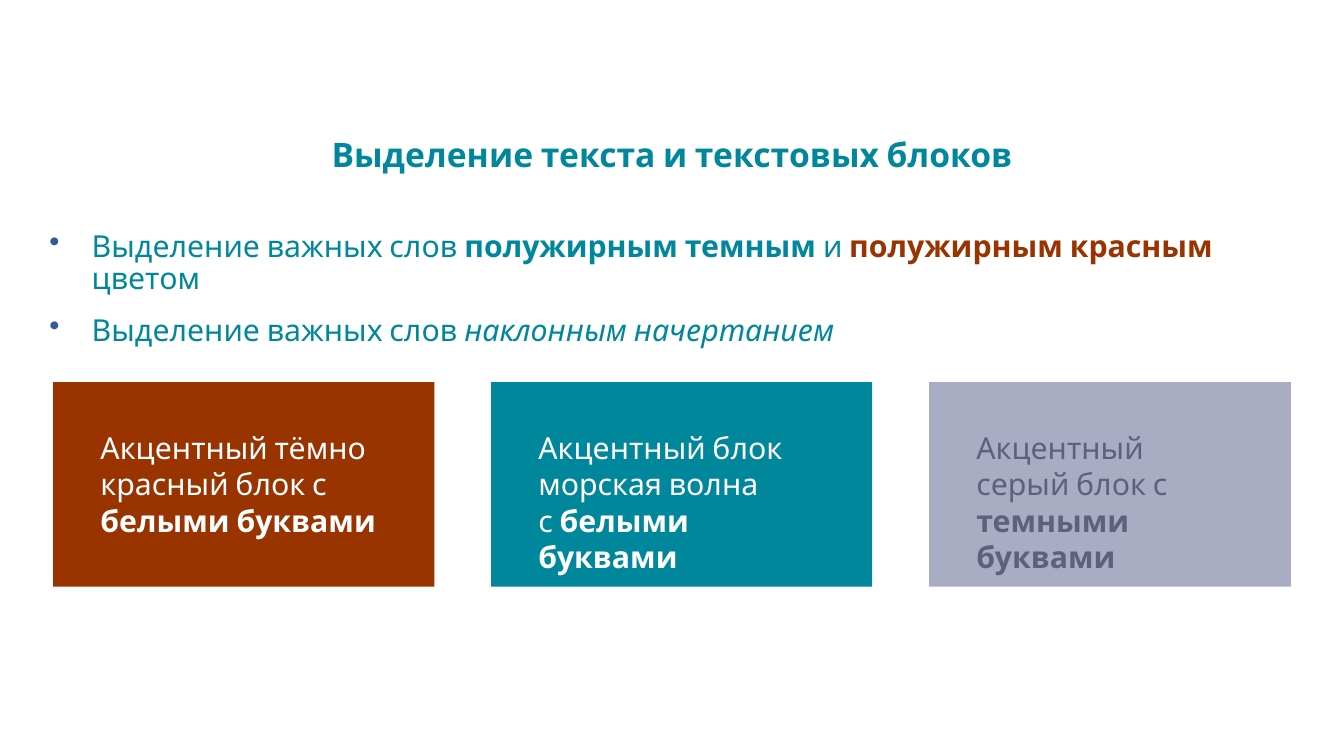
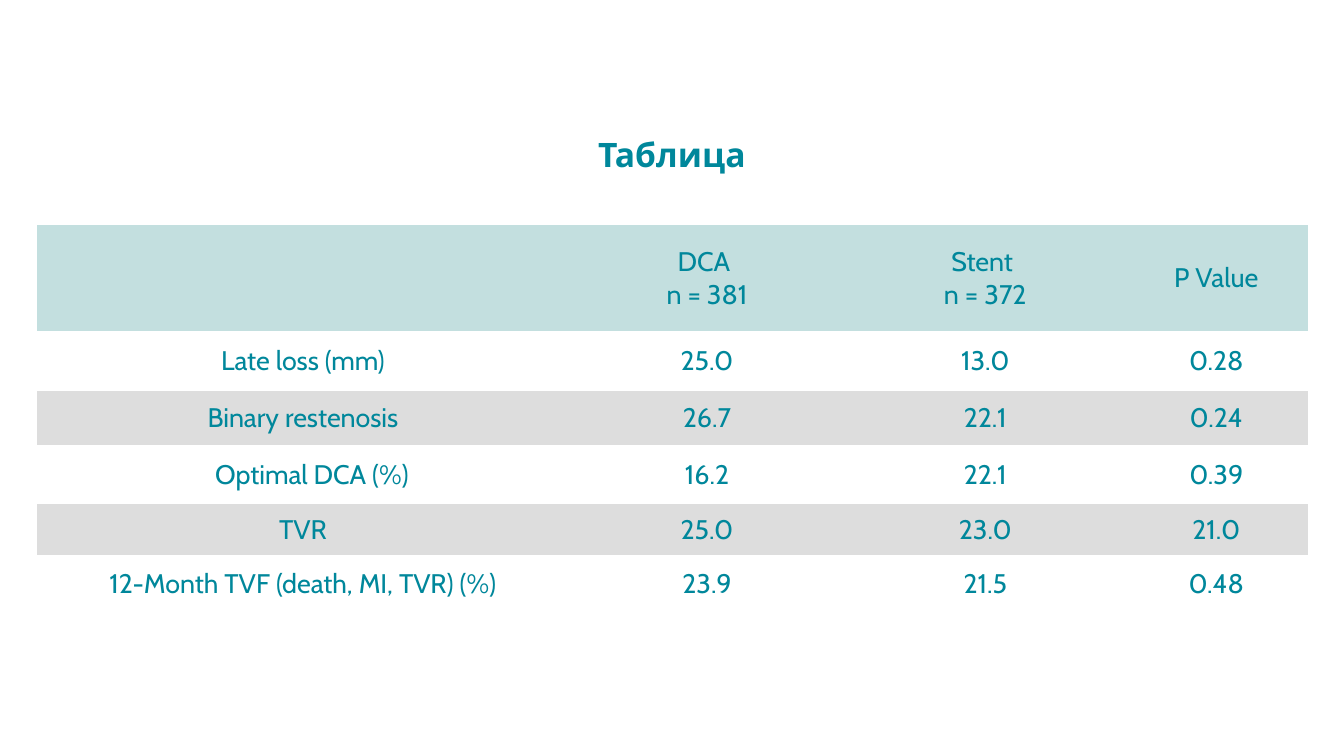
import pptx
import pptx.util
import pptx.dml.color
import pptx.enum.shapes
import pptx.enum.text
import pptx.oxml
import pptx.oxml.ns
from lxml import etree

Inches = pptx.util.Inches
Pt = pptx.util.Pt
RGBColor = pptx.dml.color.RGBColor
PP_ALIGN = pptx.enum.text.PP_ALIGN
MSO_ANCHOR = pptx.enum.text.MSO_ANCHOR
qn = pptx.oxml.ns.qn

TEAL = RGBColor(0x00, 0x87, 0x9B)
RED = RGBColor(0x99, 0x33, 0x00)
GREY = RGBColor(0xA8, 0xAD, 0xC4)
DARK_GREY = RGBColor(0x60, 0x60, 0x7D)
WHITE = RGBColor(0xFF, 0xFF, 0xFF)
HEADER = RGBColor(0xC3, 0xDF, 0xDF)
BAND = RGBColor(0xDD, 0xDD, 0xDD)
BULLET = RGBColor(0x31, 0x59, 0x9C)
FONT = "Cabin"
PLAIN_TABLE = "{2D5ABB26-0587-4C30-8999-92F81FD0307C}"


def apply(target, values):
    for name, value in values.items():
        setattr(target, name, value)


def margins(x, y):
    return {"margin_left": Inches(x), "margin_right": Inches(x),
            "margin_top": Inches(y), "margin_bottom": Inches(y)}


class Deck:
    def __init__(self):
        self.prs = pptx.Presentation()
        apply(self.prs, {"slide_width": Inches(11.11), "slide_height": Inches(6.25)})
        self.s = None

    def add_text(self, p, runs, size, color):
        for text, style in runs:
            for i, line in enumerate(text.split("\n")):
                if i:
                    p.add_line_break()
                r = p.add_run()
                r.text = line
                font = {"name": FONT, "size": Pt(size), "bold": False, **style}
                r.font.color.rgb = font.pop("color", color)
                apply(r.font, font)

    def slide(self, title):
        self.s = self.prs.slides.add_slide(self.prs.slide_layouts[5])
        sp = self.s.shapes.title
        apply(sp, {"left": 0, "top": Inches(1),
                   "width": self.prs.slide_width, "height": Inches(0.59)})
        tf = sp.text_frame
        apply(tf, {"word_wrap": True, "vertical_anchor": MSO_ANCHOR.MIDDLE,
                   "auto_size": pptx.enum.text.MSO_AUTO_SIZE.NONE, **margins(0.05, 0.05)})
        p = tf.paragraphs[0]
        apply(p, {"alignment": PP_ALIGN.CENTER, "line_spacing": 0.9})
        self.add_text(p, [(title, {"bold": True})], 20, TEAL)

    def bullets(self, box, items):
        tf = self.s.shapes.add_textbox(*map(Inches, box)).text_frame
        tf.word_wrap = True
        for i, runs in enumerate(items):
            p = tf.add_paragraph() if i else tf.paragraphs[0]
            ppr = p._p.get_or_add_pPr()
            ppr.set("marL", str(Inches(0.35)))
            ppr.set("indent", str(-Inches(0.35)))
            color = etree.SubElement(ppr, qn("a:buClr"))
            etree.SubElement(color, qn("a:srgbClr")).set("val", str(BULLET))
            etree.SubElement(ppr, qn("a:buChar")).set("char", "•")
            p.line_spacing = 0.9
            if i:
                p.space_before = Pt(11.1)
            self.add_text(p, runs, 18, TEAL)

    def block(self, box, fill, color, text, strong):
        sp = self.s.shapes.add_shape(pptx.enum.shapes.MSO_SHAPE.RECTANGLE, *map(Inches, box))
        sp.shadow.inherit = False
        sp.fill.solid()
        sp.fill.fore_color.rgb = fill
        sp.line.fill.background()
        tf = sp.text_frame
        apply(tf, {"word_wrap": True, "vertical_anchor": MSO_ANCHOR.TOP, **margins(0.39, 0.39)})
        p = tf.paragraphs[0]
        p.alignment = PP_ALIGN.LEFT
        self.add_text(p, [(text, {}), (strong, {"bold": True})], 18, color)

    def table(self, left, top, widths, heights, rows):
        box = map(Inches, (left, top, sum(widths), sum(heights)))
        table = self.s.shapes.add_table(len(heights), len(widths), *box).table
        table._tbl.tblPr.find(qn("a:tableStyleId")).text = PLAIN_TABLE
        apply(table, {"first_row": False, "horz_banding": False})
        for column, width in zip(table.columns, widths):
            column.width = Inches(width)
        for i, (row, height, texts) in enumerate(zip(table.rows, heights, rows)):
            row.height = Inches(height)
            fill = HEADER if i == 0 else BAND if i % 2 == 0 else None
            for cell, text in zip(row.cells, texts):
                apply(cell, {"vertical_anchor": MSO_ANCHOR.MIDDLE, **margins(0.11, 0.06)})
                if fill is None:
                    cell.fill.background()
                else:
                    cell.fill.solid()
                    cell.fill.fore_color.rgb = fill
                p = cell.text_frame.paragraphs[0]
                p.alignment = PP_ALIGN.CENTER
                if text:
                    self.add_text(p, [(text, {})], 16, TEAL)
        return table


def main():
    deck = Deck()

    deck.slide("Выделение текста и текстовых блоков")
    deck.bullets((0.31, 1.86, 10.53, 0.87), [
        [("Выделение важных слов ", {}), ("полужирным темным", {"bold": True}), (" и ", {}),
         ("полужирным красным ", {"bold": True, "color": RED}), ("цветом", {})],
        [("Выделение важных слов", {}), (" наклонным начертанием", {"italic": True})],
    ])
    blocks = [
        (3.15, RED, WHITE, "Акцентный тёмно красный блок с ", "белыми буквами"),
        (3.15, TEAL, WHITE, "Акцентный блок морская волна \nс ", "белыми буквами"),
        (2.99, GREY, DARK_GREY, "Акцентный серый блок с ", "темными буквами"),
    ]
    for i, (width, *look) in enumerate(blocks):
        deck.block((0.44 + 3.62 * i, 3.16, width, 1.69), *look)

    deck.slide("Таблица")
    table = deck.table(0.31, 1.86, (4.39, 2.29, 2.31, 1.51), (0.88, 0.49, 0.45, 0.49, 0.42, 0.48), [
        ("", "DCA \nn = 381", "Stent \nn = 372", "P Value"),
        ("Late loss (mm)", "25.0", "13.0", "0.28"),
        ("Binary restenosis", "26.7", "22.1", "0.24"),
        ("Optimal DCA (%)", "16.2", "22.1", "0.39"),
        ("TVR", "25.0", "23.0", "21.0"),
        ("12-Month TVF (death, MI, TVR) (%)", "23.9", "21.5", "0.48"),
    ])
    table.cell(3, 0).margin_left = Inches(0.26)

    deck.prs.save("out.pptx")


if __name__ == "__main__":
    main()
